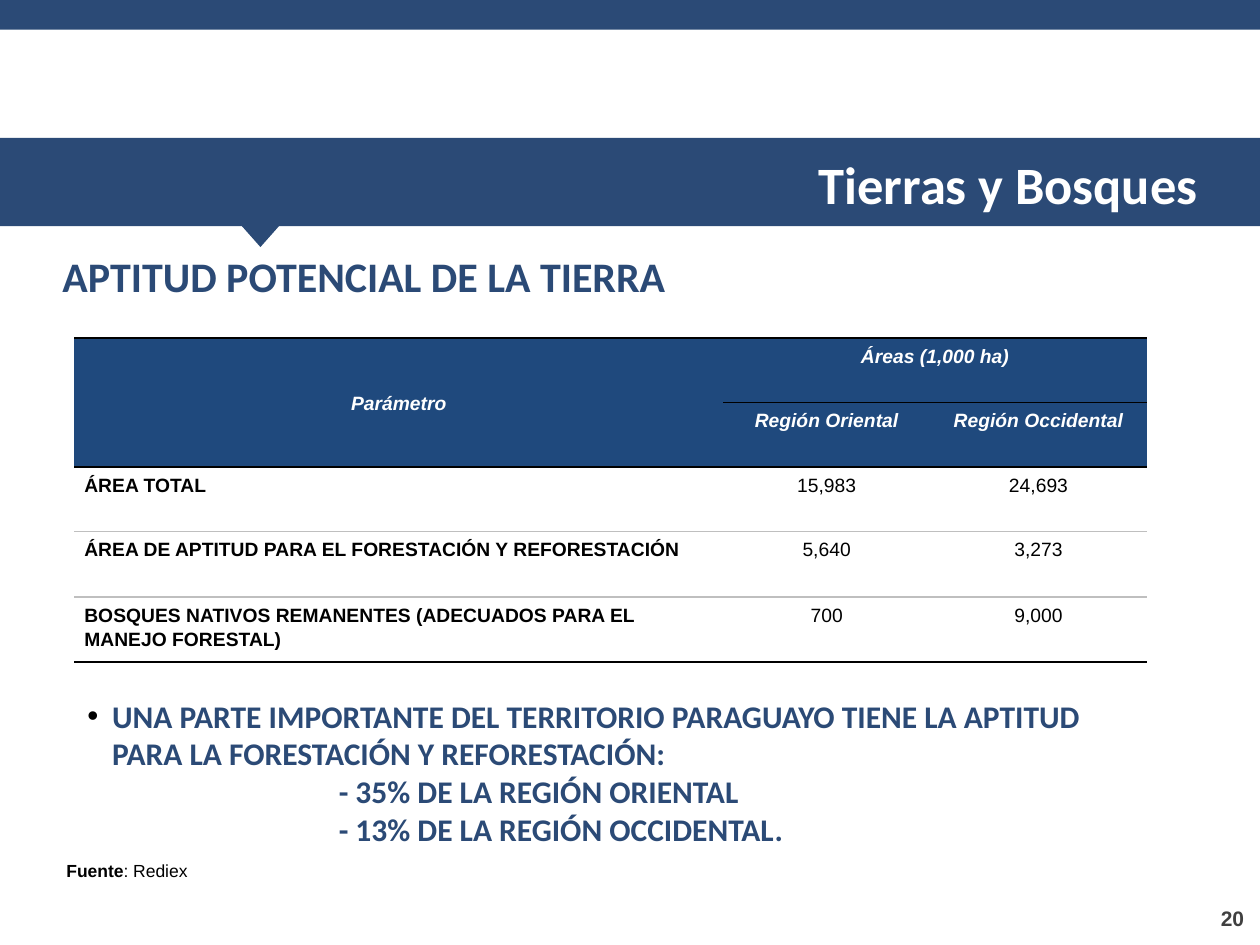
from lxml import etree
from pptx import Presentation
from pptx.dml.color import RGBColor
from pptx.enum.shapes import MSO_SHAPE
from pptx.enum.text import MSO_ANCHOR, PP_ALIGN
from pptx.oxml.ns import qn
from pptx.util import Cm, Pt

RECT, WEDGE = MSO_SHAPE.RECTANGLE, MSO_SHAPE.ISOSCELES_TRIANGLE
LEFT, MID, RIGHT = PP_ALIGN.LEFT, PP_ALIGN.CENTER, PP_ALIGN.RIGHT
TOP, CENTER = MSO_ANCHOR.TOP, MSO_ANCHOR.MIDDLE
BLUE, NAVY, WHITE, BLACK = "2B4A76", "1F497D", "FFFFFF", "000000"
GRAY, DARK = "BFBFBF", "404040"

HEAD = [["Parámetro", "Áreas (1,000 ha)", ""],
        ["", "Región Oriental", "Región Occidental"]]
BODY = [["ÁREA TOTAL", "15,983", "24,693"],
        ["ÁREA DE APTITUD PARA EL FORESTACIÓN Y REFORESTACIÓN", "5,640", "3,273"],
        ["BOSQUES NATIVOS REMANENTES (ADECUADOS PARA EL MANEJO FORESTAL)",
         "700", "9,000"]]
COLS = [13.08, 4.17, 4.37]
ROWS = [1.3, 1.3, 1.3, 1.32, 1.32]
POINTS = ["- 35% DE LA REGIÓN ORIENTAL", "- 13% DE LA REGIÓN OCCIDENTAL."]


def color(code):
    return RGBColor.from_string(code)


def add_run(para, text, size, font, code, bold=True, slant=False):
    run = para.add_run()
    run.text = text
    face = run.font
    face.size, face.name = Pt(size), font
    face.bold, face.italic = bold, slant
    face.color.rgb = color(code)


def add_form(slide, kind, x, y, wide, high, turn=0):
    form = slide.shapes.add_shape(kind, Cm(x), Cm(y), Cm(wide), Cm(high))
    form.shadow.inherit = False
    form.fill.solid()
    form.fill.fore_color.rgb = color(BLUE)
    form.line.fill.background()
    form.rotation = turn


def add_box(slide, x, y, wide, high, align=LEFT):
    frame = slide.shapes.add_textbox(Cm(x), Cm(y), Cm(wide), Cm(high)).text_frame
    frame.word_wrap = True
    frame.paragraphs[0].alignment = align
    return frame


def indent(para, left, first=0, mark=None):
    props = para._p.get_or_add_pPr()
    props.set("marL", str(Cm(left)))
    props.set("indent", str(Cm(first)))
    if mark:
        tint = etree.SubElement(props, qn("a:buClr"))
        etree.SubElement(tint, qn("a:srgbClr"), val=BLACK)
        etree.SubElement(props, qn("a:buFont"), typeface="Arial")
        etree.SubElement(props, qn("a:buChar"), char=mark)


def add_edge(cell, side, code=None):
    line = etree.SubElement(cell._tc.get_or_add_tcPr(), qn("a:" + side),
                            w=str(Pt(1)))
    if code:
        fill = etree.SubElement(line, qn("a:solidFill"))
        etree.SubElement(fill, qn("a:srgbClr"), val=code)
    else:
        etree.SubElement(line, qn("a:noFill"))


def edge_code(row, col):
    """Colour of the rule above a row; the tall head cell has none inside."""
    if row == 1 and col == 0:
        return None
    return GRAY if row in (3, 4) else BLACK


def fill_cell(cell, row, col, text):
    head = row < len(HEAD)
    for side in ("lnL", "lnR"):
        add_edge(cell, side)
    add_edge(cell, "lnT", edge_code(row, col))
    add_edge(cell, "lnB", edge_code(row + 1, col))
    if head:
        cell.fill.solid()
        cell.fill.fore_color.rgb = color(NAVY)
    else:
        cell.fill.background()
    cell.margin_left = cell.margin_right = Cm(0.1)
    cell.margin_top = cell.margin_bottom = Cm(0.1)
    cell.vertical_anchor = CENTER if head and col == 0 else TOP
    para = cell.text_frame.paragraphs[0]
    para.line_spacing = 1.15
    para.alignment = MID if head or col else LEFT
    if not head and col == 0:
        indent(para, 0.1)
    if text:
        add_run(para, text, 11, "Arial", WHITE if head else BLACK,
                head or col == 0, head)


def add_grid(slide):
    table = slide.shapes.add_table(len(ROWS), len(COLS), Cm(1.5), Cm(6.81),
                                   Cm(sum(COLS)), Cm(sum(ROWS))).table
    table.first_row = table.horz_banding = False
    for item, wide in zip(table.columns, COLS):
        item.width = Cm(wide)
    for item, high in zip(table.rows, ROWS):
        item.height = Cm(high)
    for row, texts in enumerate(HEAD + BODY):
        for col, text in enumerate(texts):
            fill_cell(table.cell(row, col), row, col, text)
    table.cell(0, 0).merge(table.cell(1, 0))
    table.cell(0, 1).merge(table.cell(0, 2))


def add_points(slide):
    frame = add_box(slide, 0.51, 13.92, 22.33, 3.33)
    para = frame.paragraphs[0]
    indent(para, 1.5, -0.5, "•")
    add_run(para, "UNA PARTE IMPORTANTE DEL TERRITORIO PARAGUAYO TIENE LA "
            "APTITUD PARA LA FORESTACIÓN Y REFORESTACIÓN:", 18, "Calibri", BLUE)
    for text in POINTS:
        para = frame.add_paragraph()
        indent(para, 6.07)
        add_run(para, text, 18, "Calibri", BLUE)


def main():
    deck = Presentation()
    deck.slide_width, deck.slide_height = Cm(25.4), Cm(19.05)
    slide = deck.slides.add_slide(deck.slide_layouts[6])

    # Bands and title
    add_form(slide, RECT, 0, 0, 25.4, 0.6)
    add_form(slide, RECT, 0, 2.78, 25.4, 1.78)
    add_form(slide, WEDGE, 4.55, 4.19, 1.4, 0.79, 180)
    frame = add_box(slide, 6.7, 2.95, 17.7, 1.78, RIGHT)
    add_run(frame.paragraphs[0], "Tierras y Bosques", 30, "Calibri", WHITE)

    # Heading
    para = add_box(slide, 0.53, 4.93, 23.16, 1.27).paragraphs[0]
    indent(para, 1.45, -0.97)
    add_run(para, "APTITUD POTENCIAL DE LA TIERRA", 24, "Calibri", BLUE)

    # Table and conclusions
    add_grid(slide)
    add_points(slide)

    # Source and page number
    para = add_box(slide, 1.09, 17.22, 18.8, 0.69).paragraphs[0]
    add_run(para, "Fuente", 10, "Arial", BLACK)
    add_run(para, ": Rediex", 10, "Arial", BLACK, False)
    frame = add_box(slide, 21.11, 18.14, 4.22, 0.76, RIGHT)
    add_run(frame.paragraphs[0], "20", 12, "Arial", DARK)

    deck.save("out.pptx")


if __name__ == "__main__":
    main()
